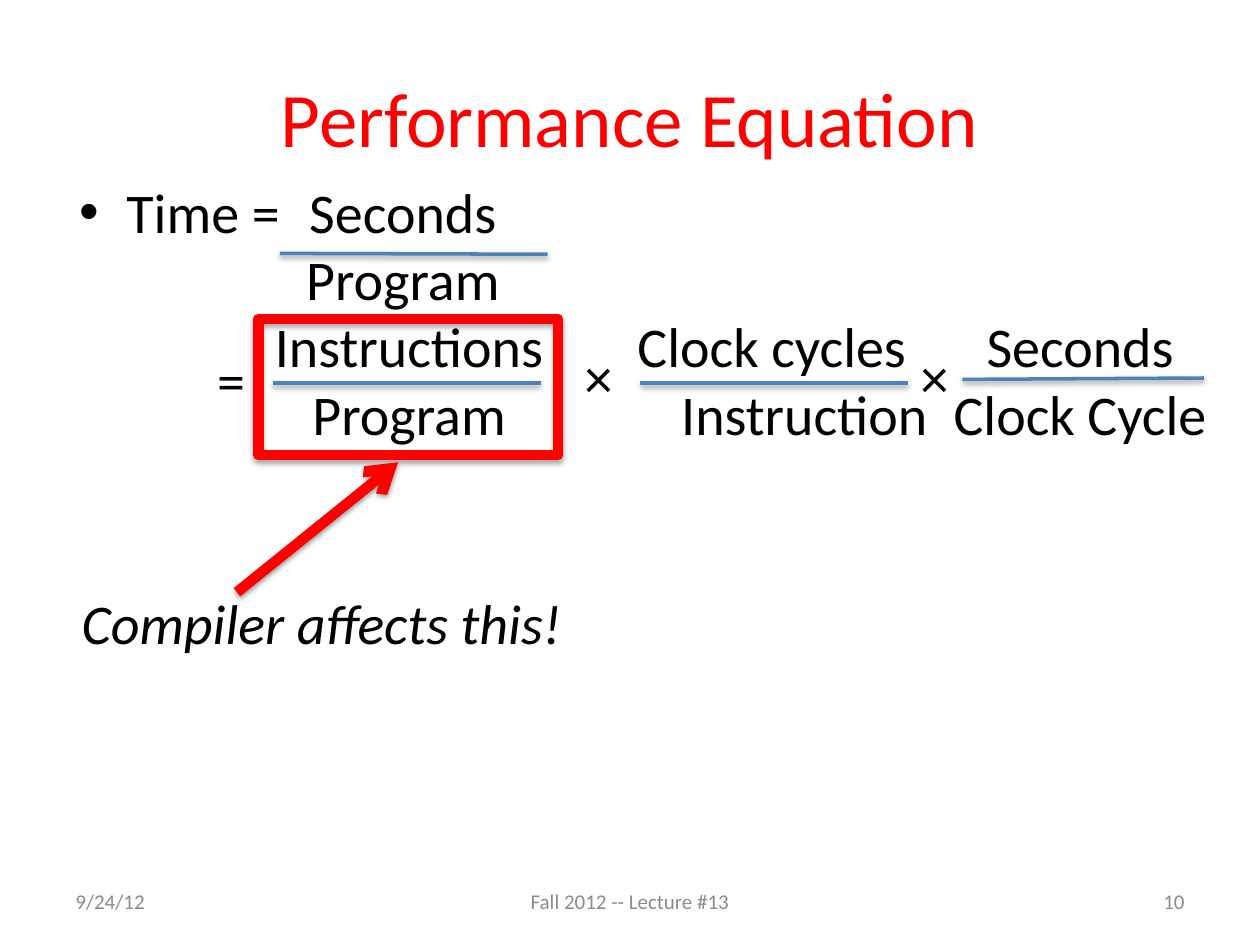
from lxml import etree
from pptx import Presentation
from pptx.dml.color import RGBColor
from pptx.enum.shapes import MSO_CONNECTOR as CONN, MSO_SHAPE as SHAPE
from pptx.enum.text import MSO_ANCHOR as ANCHOR, MSO_AUTO_SIZE as AUTO, PP_ALIGN as ALIGN
from pptx.oxml import parse_xml
from pptx.oxml.ns import nsdecls, qn
from pptx.util import Pt

RED = RGBColor(0xFF, 0x00, 0x00)
BLUE = RGBColor(0x4F, 0x81, 0xBD)
BLACK = RGBColor(0x00, 0x00, 0x00)
GRAY = RGBColor(0x8C, 0x8C, 0x8C)

prs = Presentation()
prs.slide_width, prs.slide_height = Pt(720), Pt(540)
s = prs.slides.add_slide(prs.slide_layouts[6])


def add_text(text, x, y, w, h, size=32, color=BLACK, align=ALIGN.LEFT,
             anchor=ANCHOR.TOP, italic=False, wrap=True, grow=False):
    """Add a text box; each line of text after the first follows a line break."""
    sp = s.shapes.add_textbox(Pt(x), Pt(y), Pt(w), Pt(h))
    tf = sp.text_frame
    tf.word_wrap = wrap
    tf.auto_size = AUTO.SHAPE_TO_FIT_TEXT if grow else AUTO.NONE
    tf.vertical_anchor = anchor
    p = tf.paragraphs[0]
    p.alignment = align
    for i, line in enumerate(text.split("\n")):
        if i:
            p.add_line_break()
        r = p.add_run()
        r.text = line
        r.font.name, r.font.size, r.font.italic = "Calibri", Pt(size), italic
        r.font.color.rgb = color
    # Breaks take the run size, so that every line has the same height
    for br in p._p.findall(qn("a:br")):
        etree.SubElement(br, qn("a:rPr"), sz=str(size * 100))
    return p


def style_line(sp, color, width, alpha=38, dist=1.6):
    """Set the line and a soft shadow that falls straight down."""
    sp.line.color.rgb = color
    sp.line.width = Pt(width)
    sp._element.spPr.append(parse_xml(
        f'<a:effectLst {nsdecls("a")}><a:outerShdw blurRad="{Pt(3.1)}" dist="{Pt(dist)}" '
        f'dir="5400000" rotWithShape="0"><a:srgbClr val="000000">'
        f'<a:alpha val="{alpha * 1000}"/></a:srgbClr></a:outerShdw></a:effectLst>'))


# Title
add_text("Performance Equation", 36, 21.6, 648, 90, size=44, color=RED,
         align=ALIGN.CENTER, anchor=ANCHOR.MIDDLE)

# Equation: tab stops place the numerators and denominators
p = add_text("Time = \tSeconds\n"
             "\t\tProgram\n"
             "\t\t Instructions\tClock cycles\t\tSeconds\n"
             "\t\t Program\t\tInstruction\t\tClock Cycle",
             38.16, 97.92, 660.96, 356.4)
pPr = p._p.get_or_add_pPr()
pPr.set("marL", str(Pt(27)))
pPr.set("indent", str(Pt(-27)))
etree.SubElement(pPr, qn("a:buFont"), typeface="Arial")
etree.SubElement(pPr, qn("a:buChar"), char="•")
tabs = etree.SubElement(pPr, qn("a:tabLst"))
for pos, kind in ((99, "l"), (185, "ctr"), (319, "l"), (344, "l"),
                  (495, "ctr"), (572, "ctr")):
    etree.SubElement(tabs, qn("a:tab"), pos=str(Pt(pos)), algn=kind)

# Footer
for text, x, w, align in (("9/24/12", 36, 168, ALIGN.LEFT),
                          ("Fall 2012 -- Lecture #13", 246, 228, ALIGN.CENTER),
                          ("10", 516, 168, ALIGN.RIGHT)):
    add_text(text, x, 500.5, w, 28.75, size=12, color=GRAY, align=align,
             anchor=ANCHOR.MIDDLE)

# Fraction bars
for x1, y1, x2, y2 in ((160, 144.8, 313, 145.3), (156, 219, 309, 219),
                       (366, 219, 519, 219), (550, 216.8, 688, 216)):
    bar = s.shapes.add_connector(CONN.STRAIGHT, Pt(x1), Pt(y1), Pt(x2), Pt(y2))
    style_line(bar, BLUE, 2)

# Operators between the fractions
for sign, x, y in (("×", 519, 192.4), ("×", 327, 192.4), ("=", 117, 193.6)):
    add_text(sign, x, y, 31, 46, wrap=sign == "=", grow=True)

# Highlighted factor with its note and arrow
box = s.shapes.add_shape(SHAPE.RECTANGLE, Pt(147.6), Pt(182.2), Pt(171.4), Pt(77.8))
box.fill.background()
style_line(box, RED, 6, alpha=35, dist=1.8)

add_text("Compiler affects this!", 39.6, 332.6, 299.5, 46, italic=True,
         wrap=False, grow=True)

arrow = s.shapes.add_connector(CONN.STRAIGHT, Pt(135.4), Pt(338.4), Pt(227.5), Pt(264.2))
style_line(arrow, RED, 6)
etree.SubElement(arrow._element.spPr.find(qn("a:ln")), qn("a:tailEnd"), type="arrow")

prs.save("out.pptx")
